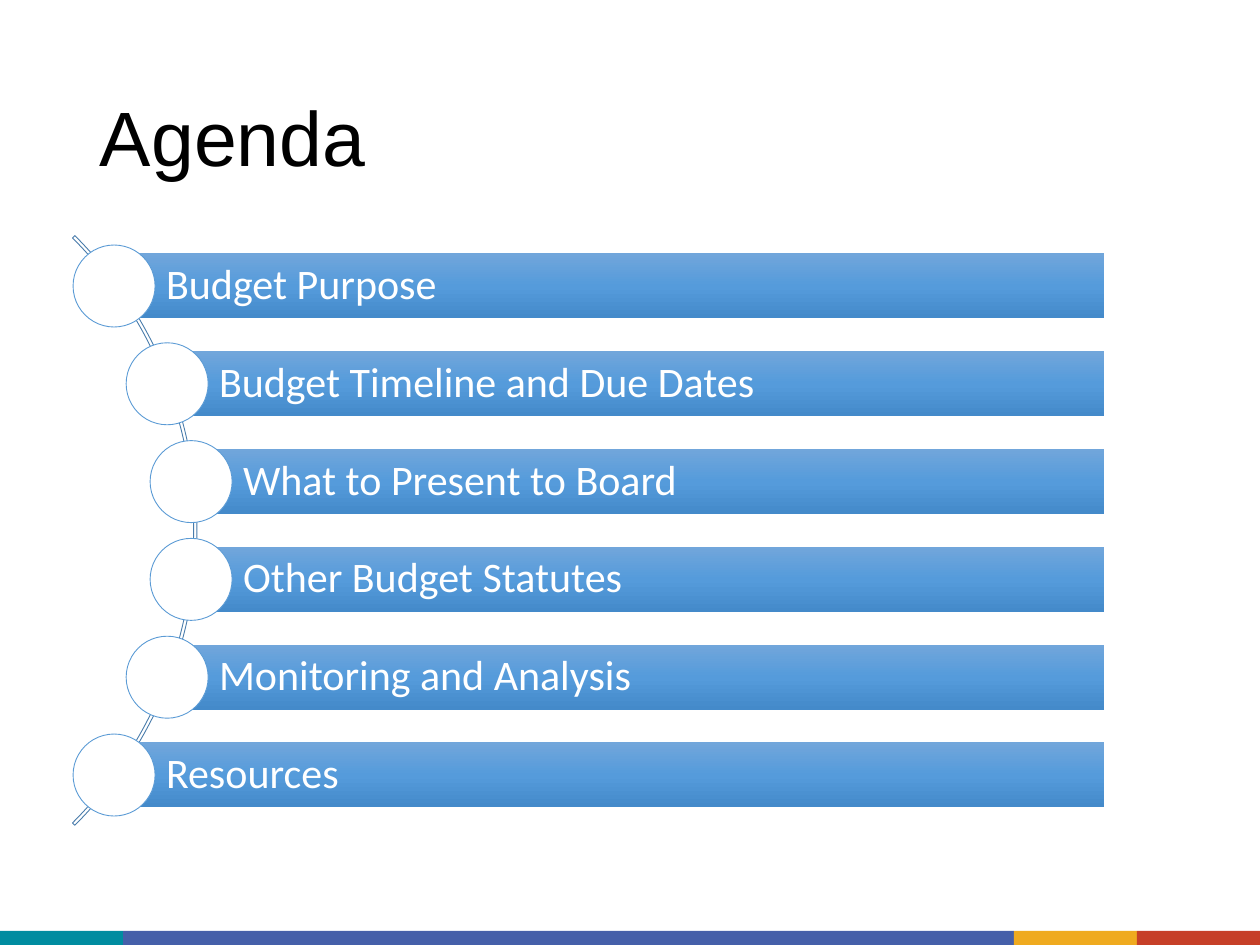
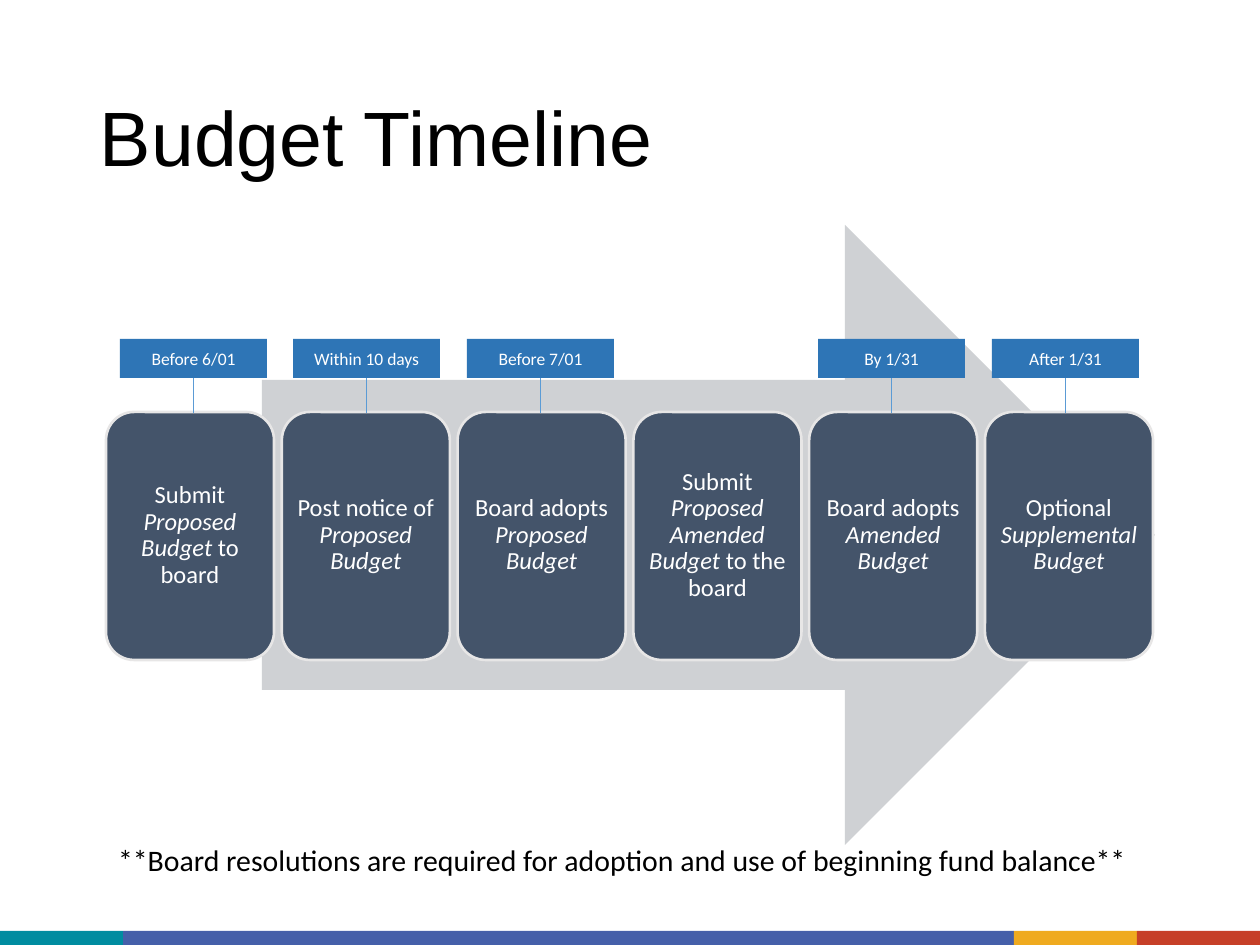
from copy import deepcopy
from math import sqrt

from lxml.etree import SubElement
from pptx import Presentation
from pptx.dml.color import RGBColor
from pptx.enum.shapes import MSO_CONNECTOR, MSO_SHAPE
from pptx.enum.text import MSO_ANCHOR, PP_ALIGN
from pptx.oxml.ns import qn
from pptx.util import Pt

EMU_PER_PX = 914400 / 126
SLIDE_WIDTH, SLIDE_HEIGHT = 1260, 945

BLACK, WHITE = "000000", "FFFFFF"
BLUE, DARK_BLUE, ARC_BLUE = "5B9BD5", "2E75B6", "497CAB"
SLATE, PALE_GRAY, ARROW_GRAY = "44546A", "E7E6E6", "CFD1D4"
BAR_GRADIENT = [(0, "71A6DB"), (0.5, "559BDB"), (1, "448ACA")]
FOOTER_BANDS = [(0, 123, "008CA0"), (123, 891, "455FA9"),
                (1014, 123, "EFAA1F"), (1137, 123, "C63F28")]
TITLE_BOX = (87, 50, 1086, 183)

AGENDA = ["Budget Purpose", "Budget Timeline and Due Dates",
          "What to Present to Board", "Other Budget Statutes",
          "Monitoring and Analysis", "Resources"]

# Each step is a list of (text, italic) runs
STEPS = [
    [("Submit ", False), ("Proposed Budget ", True), ("to board", False)],
    [("Post notice of ", False), ("Proposed Budget", True)],
    [("Board adopts ", False), ("Proposed Budget", True)],
    [("Submit ", False), ("Proposed Amended Budget", True),
     (" to the board", False)],
    [("Board adopts ", False), ("Amended Budget", True)],
    [("Optional ", False), ("Supplemental Budget", True)],
]
# Left edge of each deadline within the timeline, and its text
DEADLINES = [(14, "Before 6/01"), (187, "Within 10 days"),
             (361, "Before 7/01"), (712, "By 1/31"), (886, "After 1/31")]
FOOTNOTE = ("**Board resolutions are required for adoption "
            "and use of beginning fund balance**")


def px(length):
    return round(length * EMU_PER_PX)


def color(hex_code):
    return RGBColor.from_string(hex_code)


def add_shape(slide, kind, box, fill=None, line=None, line_width=0.5):
    shape = slide.shapes.add_shape(kind, *map(px, box))
    shape.shadow.inherit = False
    if fill:
        shape.fill.solid()
        shape.fill.fore_color.rgb = color(fill)
    else:
        shape.fill.background()
    if line:
        shape.line.color.rgb = color(line)
        shape.line.width = Pt(line_width)
    else:
        shape.line.fill.background()
    return shape


def set_text(shape, runs, size, font="Calibri", font_color=WHITE,
             align=PP_ALIGN.LEFT, anchor=MSO_ANCHOR.MIDDLE,
             insets=(13, 6, 13, 6), line_spacing=0.9):
    frame = shape.text_frame
    frame.word_wrap = True
    frame.vertical_anchor = anchor
    (frame.margin_left, frame.margin_top,
     frame.margin_right, frame.margin_bottom) = map(px, insets)
    paragraph = frame.paragraphs[0]
    paragraph.alignment = align
    paragraph.line_spacing = line_spacing
    paragraph.font.name = font
    paragraph.font.size = Pt(size)
    paragraph.font.color.rgb = color(font_color)
    for text, italic in runs:
        run = paragraph.add_run()
        run.text = text
        if italic:
            run.font.italic = True


def set_gradient(shape, stops):
    shape.fill.gradient()
    shape.fill.gradient_angle = 270  # top to bottom
    stop_list = shape._element.spPr.find(".//" + qn("a:gsLst"))
    stop_list.append(deepcopy(stop_list[0]))
    for stop, (position, hex_code) in zip(shape.fill.gradient_stops, stops):
        stop.position = position
        stop.color.rgb = color(hex_code)


def add_line(slide, start, end, hex_code):
    connector = slide.shapes.add_connector(
        MSO_CONNECTOR.STRAIGHT, *map(px, start + end))
    connector.line.color.rgb = color(hex_code)
    connector.line.width = Pt(0.5)
    SubElement(connector._element.spPr, qn("a:effectLst"))


def add_titled_slide(presentation, title):
    slide = presentation.slides.add_slide(presentation.slide_layouts[6])
    # Footer bands
    for left, width, fill in FOOTER_BANDS:
        add_shape(slide, MSO_SHAPE.RECTANGLE,
                  (left, 931, width, SLIDE_HEIGHT - 931), fill)
    # Title
    title_box = slide.shapes.add_textbox(*map(px, TITLE_BOX))
    set_text(title_box, [(title, False)], 44, "Arial", BLACK)
    return slide


def add_agenda_list(slide, box, items):
    """Bars whose left ends follow an arc centred off to the left."""
    left, top, width, height = box
    bar_height, circle_size = 65, 82
    arc_size, arc_radius = 834, 414
    center_x, center_y = left - 292, top + height / 2

    # Arc
    arc = add_shape(slide, MSO_SHAPE.BLOCK_ARC,
                    (center_x - arc_size / 2, center_y - arc_size / 2,
                     arc_size, arc_size), line=ARC_BLUE)
    for index, value in enumerate((189, 27, 0.004)):
        arc.adjustments[index] = value

    # Bars and circles
    pitch = (height - circle_size) / (len(items) - 1)
    for index, item in enumerate(items):
        y = top + circle_size / 2 + index * pitch
        x = center_x + sqrt(arc_radius ** 2 - (y - center_y) ** 2)
        bar = add_shape(slide, MSO_SHAPE.RECTANGLE,
                        (x, y - bar_height / 2, left + width - x, bar_height))
        set_gradient(bar, BAR_GRADIENT)
        set_text(bar, [(item, False)], 24, insets=(52, 9, 9, 9))
        add_shape(slide, MSO_SHAPE.OVAL,
                  (x - circle_size / 2, y - circle_size / 2,
                   circle_size, circle_size), WHITE, BLUE)


def add_timeline(slide, box, steps, deadlines):
    left, top, width, height = box
    card_width, card_height, card_top = 168, 248, top + 187
    label_width, label_height, label_top = 147, 39, top + 114

    # Arrow behind the steps
    add_shape(slide, MSO_SHAPE.RIGHT_ARROW,
              (left + 156, top, width - 154, height), ARROW_GRAY)

    # Step cards
    pitch = (width - card_width) / (len(steps) - 1)
    for index, runs in enumerate(steps):
        card = add_shape(slide, MSO_SHAPE.ROUNDED_RECTANGLE,
                         (left + index * pitch, card_top,
                          card_width, card_height), SLATE, PALE_GRAY, 1.5)
        # Narrow sides leave room for the longest word
        set_text(card, runs, 14, align=PP_ALIGN.CENTER, insets=(6, 7, 6, 8))

    # Deadlines with lines down to the cards
    for offset, text in deadlines:
        x = left + offset
        label = add_shape(slide, MSO_SHAPE.RECTANGLE,
                          (x, label_top, label_width, label_height), DARK_BLUE)
        set_text(label, [(text, False)], 10, align=PP_ALIGN.CENTER,
                 line_spacing=1.0)
        middle = x + label_width / 2
        add_line(slide, (middle, label_top + label_height),
                 (middle, card_top + 1), BLUE)


def add_footnote(slide, box, text):
    footnote = slide.shapes.add_textbox(*map(px, box))
    set_text(footnote, [(text, False)], 17, font_color=BLACK,
             anchor=MSO_ANCHOR.TOP, line_spacing=1.0)


def main():
    presentation = Presentation()
    presentation.slide_width = px(SLIDE_WIDTH)
    presentation.slide_height = px(SLIDE_HEIGHT)

    agenda_slide = add_titled_slide(presentation, "Agenda")
    add_agenda_list(agenda_slide, (72, 245, 1032, 571), AGENDA)

    timeline_slide = add_titled_slide(presentation, "Budget Timeline")
    add_timeline(timeline_slide, (106, 225, 1047, 620), STEPS, DEADLINES)
    add_footnote(timeline_slide, (105, 836, 1050, 49), FOOTNOTE)

    presentation.save("out.pptx")


if __name__ == "__main__":
    main()
